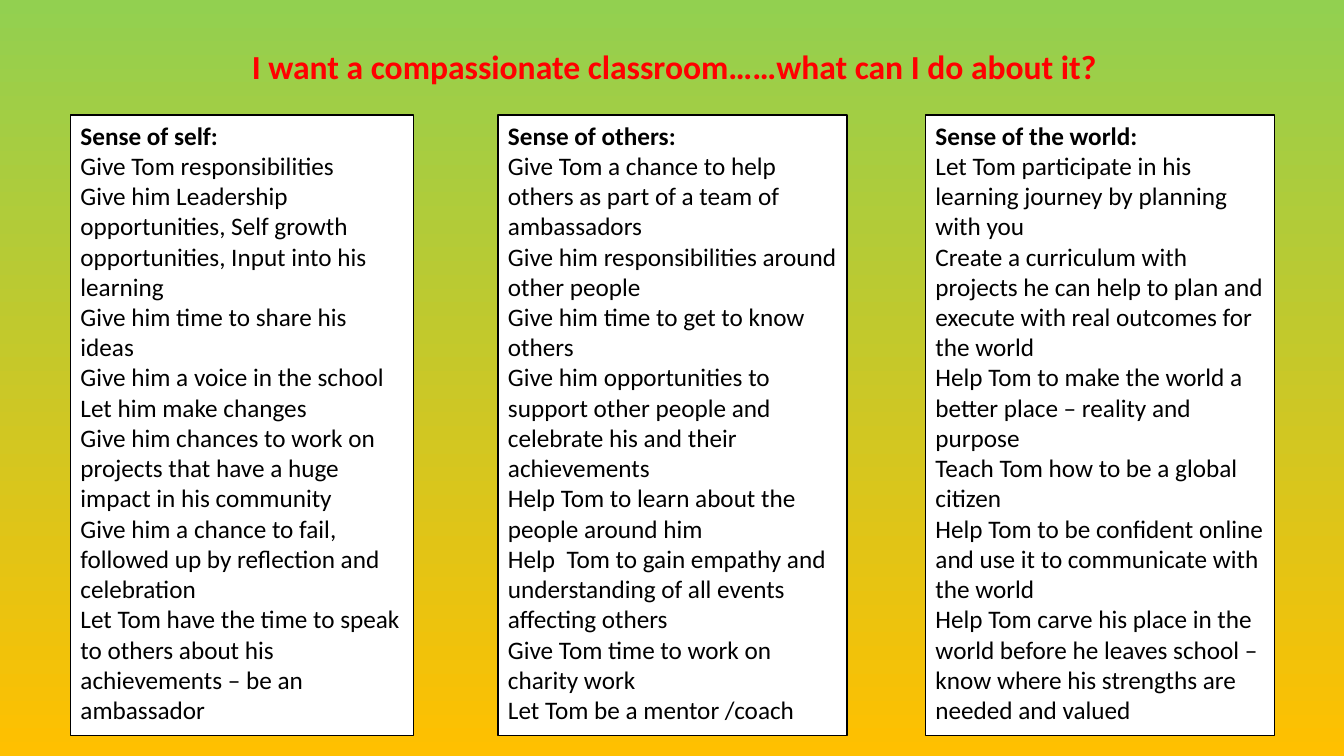
from dataclasses import dataclass

from pptx import Presentation
from pptx.dml.color import RGBColor
from pptx.enum.shapes import MSO_SHAPE
from pptx.enum.text import MSO_ANCHOR, PP_ALIGN
from pptx.slide import Slide
from pptx.text.text import TextFrame
from pptx.util import Inches, Pt

RECT = MSO_SHAPE.RECTANGLE
TOP = MSO_ANCHOR.TOP
LEFT = PP_ALIGN.LEFT

GREEN = RGBColor(0x92, 0xD0, 0x50)
AMBER = RGBColor(0xFF, 0xC0, 0x00)
RED = RGBColor(0xFF, 0x00, 0x00)
BLACK = RGBColor(0x00, 0x00, 0x00)
WHITE = RGBColor(0xFF, 0xFF, 0xFF)

FONT = "Calibri"
START = 0.7
PITCH = 4.24


@dataclass
class Panel:
    head: str
    ideas: list[str]
    width: float = 3.46


PANELS = [
    Panel("Sense of self:", [
        "Give Tom responsibilities",
        "Give him Leadership opportunities, Self growth opportunities, Input into his learning",
        "Give him time to share his ideas",
        "Give him a voice in the school",
        "Let him make changes",
        "Give him chances to work on projects that have a huge impact in his community",
        "Give him a chance to fail, followed up by reflection and celebration",
        "Let Tom have the time to speak to others about his achievements – be an ambassador",
    ], 3.4),
    Panel("Sense of others:", [
        "Give Tom a chance to help others as part of a team of ambassadors",
        "Give him responsibilities around other people",
        "Give him time to get to know others",
        "Give him opportunities to support other people and celebrate his and their achievements",
        "Help Tom to learn about the people around him",
        "Help  Tom to gain empathy and understanding of all events affecting others",
        "Give Tom time to work on charity work",
        "Let Tom be a mentor /coach",
    ]),
    Panel("Sense of the world:", [
        "Let Tom participate in his learning journey by planning with you",
        "Create a curriculum with projects he can help to plan and execute with real outcomes for the world",
        "Help Tom to make the world a better place – reality and purpose",
        "Teach Tom how to be a global citizen",
        "Help Tom to be confident online and use it to communicate with the world",
        "Help Tom carve his place in the world before he leaves school – know where his strengths are needed and valued",
    ]),
]


def write(frame: TextFrame, lines: list[str], size: int, color: RGBColor) -> None:
    """Fill the frame with one paragraph a line, the first in bold."""
    frame.word_wrap = True
    frame.vertical_anchor = TOP
    frame.text = "\n".join(lines)
    for row, para in enumerate(frame.paragraphs):
        para.alignment = LEFT
        font = para.font
        font.name = FONT
        font.size = Pt(size)
        font.bold = row == 0
        font.color.rgb = color


def paint(slide: Slide) -> None:
    """Shade the background from green at the top to amber."""
    fill = slide.background.fill
    fill.gradient()
    fill.gradient_angle = 270
    for stop, color, place in zip(fill.gradient_stops, (GREEN, AMBER), (0, 1)):
        stop.color.rgb = color
        stop.position = place


def add_panel(slide: Slide, panel: Panel, left: float) -> None:
    box = slide.shapes.add_shape(
        RECT, Inches(left), Inches(1.14), Inches(panel.width), Inches(6.16))
    box.shadow.inherit = False
    box.fill.solid()
    box.fill.fore_color.rgb = WHITE
    box.line.color.rgb = BLACK
    box.line.width = Pt(1)
    write(box.text_frame, [panel.head, *panel.ideas], 18, BLACK)


def main() -> None:
    deck = Presentation()
    deck.slide_width = Inches(13.33)
    deck.slide_height = Inches(7.5)
    slide = deck.slides.add_slide(deck.slide_layouts[6])
    paint(slide)
    title = slide.shapes.add_textbox(
        Inches(2.4), Inches(0.41), Inches(8.72), Inches(0.5))
    write(title.text_frame,
          ["I want a compassionate classroom……what can I do about it?"], 24, RED)
    for col, panel in enumerate(PANELS):
        add_panel(slide, panel, START + col * PITCH)
    deck.save("out.pptx")


if __name__ == "__main__":
    main()
